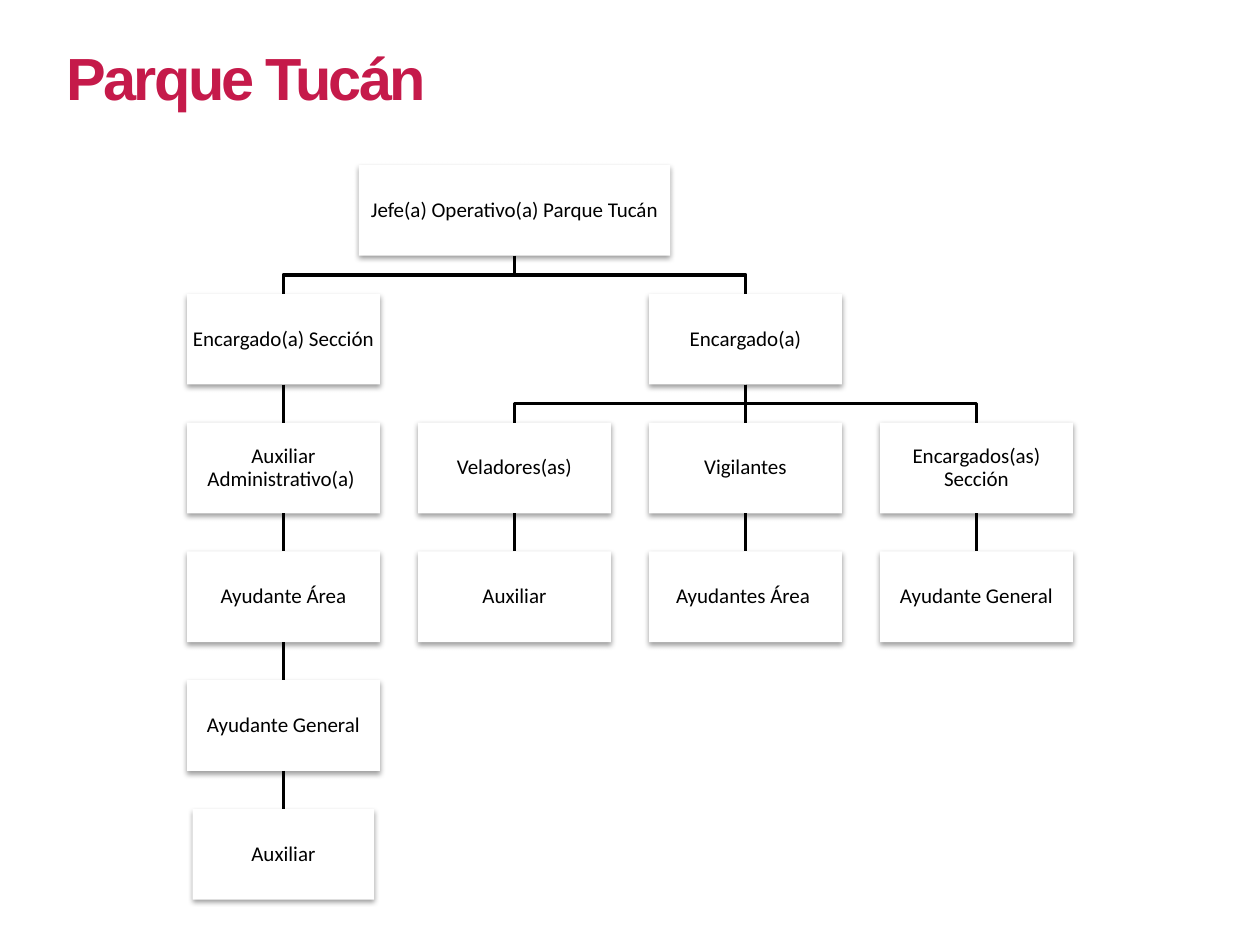
from lxml import etree
from pptx import Presentation
from pptx.dml.color import RGBColor
from pptx.enum import shapes, text
from pptx.oxml import ns
from pptx.util import Inches, Pt

TITLE = "Parque Tucán"
BLACK, WHITE, CRIMSON = "000000", "FFFFFF", "C51A4A"

# key: (label, column, row, width, parent)
POSTS = {
    "jefe": ("Jefe(a) Operativo(a) Parque Tucán", 1, 0, 2.47, None),
    "seccion": ("Encargado(a) Sección", 0, 1, 1.53, "jefe"),
    "administrativo": ("Auxiliar Administrativo(a) ", 0, 2, 1.53, "seccion"),
    "area": ("Ayudante Área", 0, 3, 1.53, "administrativo"),
    "general": ("Ayudante General", 0, 4, 1.53, "area"),
    "auxiliar": ("Auxiliar", 0, 5, 1.44, "general"),
    "encargado": ("Encargado(a)", 2, 1, 1.53, "jefe"),
    "veladores": ("Veladores(as)", 1, 2, 1.53, "encargado"),
    "auxiliar_veladores": ("Auxiliar", 1, 3, 1.53, "veladores"),
    "vigilantes": ("Vigilantes", 2, 2, 1.53, "encargado"),
    "ayudantes": ("Ayudantes Área ", 2, 3, 1.53, "vigilantes"),
    "secciones": ("Encargados(as) Sección", 3, 2, 1.53, "encargado"),
    "general_secciones": ("Ayudante General", 3, 3, 1.53, "secciones"),
}

FIRST_CENTER, COLUMN_STEP = 2.25, 5.5 / 3
FIRST_TOP, ROW_STEP, BOX_HEIGHT = 1.31, 5.11 / 5, 0.72


def color(value):
    return RGBColor.from_string(value)


def style_run(run, font_name, size, fill):
    run.font.name = font_name
    run.font.size = Pt(size)
    run.font.color.rgb = color(fill)


def add_shadow(box):
    box.shadow.inherit = False
    effects = box._element.spPr.find(ns.qn("a:effectLst"))
    outer = etree.SubElement(effects, ns.qn("a:outerShdw"), blurRad="40000",
                             dist="20000", dir="5400000", rotWithShape="0")
    tint = etree.SubElement(outer, ns.qn("a:srgbClr"), val=BLACK)
    etree.SubElement(tint, ns.qn("a:alpha"), val="38000")


def add_post(slide, label, column, row, width):
    center = FIRST_CENTER + column * COLUMN_STEP
    box = slide.shapes.add_shape(
        shapes.MSO_SHAPE.RECTANGLE, Inches(center - width / 2),
        Inches(FIRST_TOP + row * ROW_STEP), Inches(width), Inches(BOX_HEIGHT))
    box.fill.solid()
    box.fill.fore_color.rgb = color(WHITE)
    box.line.fill.background()
    add_shadow(box)
    frame = box.text_frame
    frame.word_wrap = True
    frame.vertical_anchor = text.MSO_ANCHOR.MIDDLE
    frame.margin_left = frame.margin_right = Inches(0.01)
    frame.margin_top = frame.margin_bottom = Inches(0.01)
    frame.text = label
    paragraph = frame.paragraphs[0]
    paragraph.alignment = text.PP_ALIGN.CENTER
    paragraph.line_spacing = 0.9
    style_run(paragraph.runs[0], "Calibri", 12, BLACK)
    return box


def add_straight_link(slide, parent, child):
    link = slide.shapes.add_connector(shapes.MSO_CONNECTOR.STRAIGHT, 0, 0, 0, 0)
    link.begin_connect(parent, 2)
    link.end_connect(child, 0)
    etree.SubElement(link._element.spPr, ns.qn("a:effectLst"))
    return link


def add_branch_link(slide, parent, child):
    start_x = parent.left + parent.width // 2
    end_x = child.left + child.width // 2
    start_y, end_y = parent.top + parent.height, child.top
    middle_y = (start_y + end_y) // 2
    builder = slide.shapes.build_freeform(start_x, start_y)
    builder.add_line_segments(
        [(start_x, middle_y), (end_x, middle_y), (end_x, end_y)], close=False)
    link = builder.convert_to_shape()
    link.fill.background()
    link.shadow.inherit = False
    return link


def main():
    deck = Presentation()
    deck.slide_width, deck.slide_height = Inches(10), Inches(7.5)
    slide = deck.slides.add_slide(deck.slide_layouts[6])

    heading = slide.shapes.add_textbox(
        Inches(0.43), Inches(0.28), Inches(3.54), Inches(0.69))
    heading.text_frame.word_wrap = True
    heading.text_frame.auto_size = text.MSO_AUTO_SIZE.SHAPE_TO_FIT_TEXT
    heading.text_frame.text = TITLE
    run = heading.text_frame.paragraphs[0].runs[0]
    style_run(run, "Arial", 34, CRIMSON)
    run.font.bold = True
    run._r.get_or_add_rPr().set("spc", "-150")

    boxes = {key: add_post(slide, *post[:4]) for key, post in POSTS.items()}
    for key, (_, column, _, _, boss) in POSTS.items():
        if boss is None:
            continue
        same_column = column == POSTS[boss][1]
        add_link = add_straight_link if same_column else add_branch_link
        link = add_link(slide, boxes[boss], boxes[key])
        link.line.color.rgb = color(BLACK)
        link.line.width = Pt(2)

    deck.save("out.pptx")


if __name__ == "__main__":
    main()
